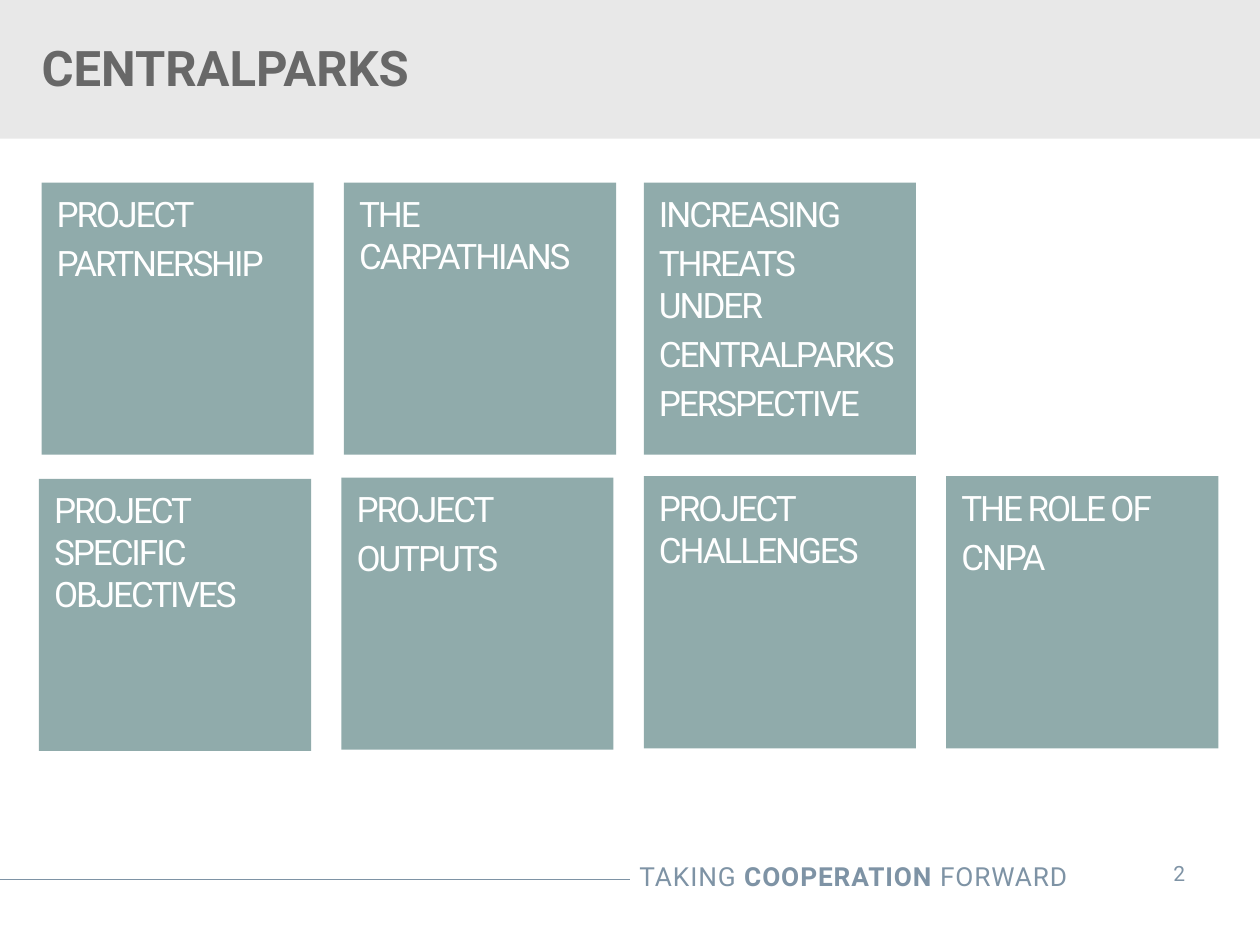
from lxml import etree
from pptx import Presentation
from pptx.dml.color import RGBColor
from pptx.enum.shapes import MSO_CONNECTOR, MSO_SHAPE
from pptx.enum.text import MSO_ANCHOR, MSO_AUTO_SIZE, PP_ALIGN
from pptx.oxml.ns import qn
from pptx.util import Inches, Pt

FONT = "Roboto"
BAND = RGBColor(0xE8, 0xE8, 0xE8)
TITLE = RGBColor(0x68, 0x68, 0x68)
TILE = RGBColor(0x90, 0xAB, 0xAB)
SLATE = RGBColor(0x7E, 0x93, 0xA5)
WHITE = RGBColor(0xFF, 0xFF, 0xFF)

TILE_SIZE = 2.16
# Left, top and paragraphs of each topic tile
TILES = [
    (0.33, 1.45, ["PROJECT", "PARTNERSHIP"]),
    (2.73, 1.45, ["THE CARPATHIANS"]),
    (5.11, 1.45, ["INCREASING", "THREATS UNDER", "CENTRALPARKS", "PERSPECTIVE"]),
    (0.31, 3.80, ["PROJECT SPECIFIC OBJECTIVES"]),
    (2.71, 3.79, ["PROJECT", "OUTPUTS"]),
    (5.11, 3.78, ["PROJECT CHALLENGES"]),
    (7.51, 3.78, ["THE ROLE OF", "CNPA"]),
]


def format_run(r, size, color, bold=False, spacing=0):
    """Set the font of a run; spacing is the tracking in points."""
    r.font.name = FONT
    r.font.size = Pt(size)
    r.font.bold = bold
    r.font.color.rgb = color
    if spacing:
        r._r.get_or_add_rPr().set("spc", str(round(spacing * 100)))


def set_margins(tf, left, top, right, bottom):
    tf.margin_left, tf.margin_top = Inches(left), Inches(top)
    tf.margin_right, tf.margin_bottom = Inches(right), Inches(bottom)


def add_rect(s, left, top, width, height, color):
    sp = s.shapes.add_shape(MSO_SHAPE.RECTANGLE, Inches(left), Inches(top),
                            Inches(width), Inches(height))
    sp.shadow.inherit = False
    sp.fill.solid()
    sp.fill.fore_color.rgb = color
    sp.line.fill.background()
    return sp


def add_header(s, left, top, width, height):
    add_rect(s, left, top, width, height, BAND)
    title = s.shapes.title
    title.left, title.top = Inches(left - 0.01), Inches(top + 0.16)
    title.width, title.height = Inches(7.18), Inches(0.75)
    # Bring the title in front of the band
    title.element.getparent().append(title.element)
    tf = title.text_frame
    tf.text = "CENTRALPARKS"
    tf.auto_size = MSO_AUTO_SIZE.NONE
    tf.vertical_anchor = MSO_ANCHOR.MIDDLE
    p = tf.paragraphs[0]
    p.alignment = PP_ALIGN.LEFT
    p._p.get_or_add_pPr().set("marL", str(Inches(0.24)))
    format_run(p.runs[0], 28, TITLE, bold=True)


def add_tile(s, left, top, size, lines):
    tf = add_rect(s, left, top, size, size, TILE).text_frame
    tf.word_wrap = True
    tf.vertical_anchor = MSO_ANCHOR.TOP
    set_margins(tf, 0.12, 0.08, 0.12, 0.12)
    tf.text = "\n".join(lines)
    for i, p in enumerate(tf.paragraphs):
        p.alignment = PP_ALIGN.LEFT
        p.space_before = Pt(4 if i else 0)
        format_run(p.runs[0], 20, WHITE, spacing=-1.2)


def add_footer(s, left, top, width, height):
    # Rule up to the middle of the slide
    y = Inches(top + 0.25)
    rule = s.shapes.add_connector(MSO_CONNECTOR.STRAIGHT, Inches(left), y,
                                  Inches(left + width / 2), y)
    rule.line.color.rgb = SLATE
    rule.line.width = Pt(0.75)
    etree.SubElement(rule._element.spPr, qn("a:effectLst"))

    # Tagline
    tf = s.shapes.add_textbox(Inches(left + 3.88), Inches(top + 0.05),
                              Inches(4.69), Inches(0.35)).text_frame
    tf.word_wrap = True
    p = tf.paragraphs[0]
    p.alignment = PP_ALIGN.RIGHT
    for text, bold in [("TAKING ", False), ("COOPERATION", True), (" FORWARD", False)]:
        r = p.add_run()
        r.text = text
        format_run(r, 15, SLATE, bold, spacing=0.5)

    # Page number
    tf = s.shapes.add_textbox(Inches(left + 8.99), Inches(top),
                              Inches(0.74), Inches(height)).text_frame
    tf.word_wrap = False
    set_margins(tf, 0.2, 0.1, 0.2, 0.1)
    tf.text = "2"
    p = tf.paragraphs[0]
    p.alignment = PP_ALIGN.CENTER
    format_run(p.runs[0], 12, SLATE)


def main():
    prs = Presentation()
    prs.slide_width, prs.slide_height = Inches(10), Inches(7.5)
    s = prs.slides.add_slide(prs.slide_layouts.get_by_name("Title Only"))
    add_header(s, 0, 0, 10, 1.1)
    for left, top, lines in TILES:
        add_tile(s, left, top, TILE_SIZE, lines)
    add_footer(s, 0, 6.73, 10, 0.4)
    prs.save("out.pptx")


if __name__ == "__main__":
    main()
